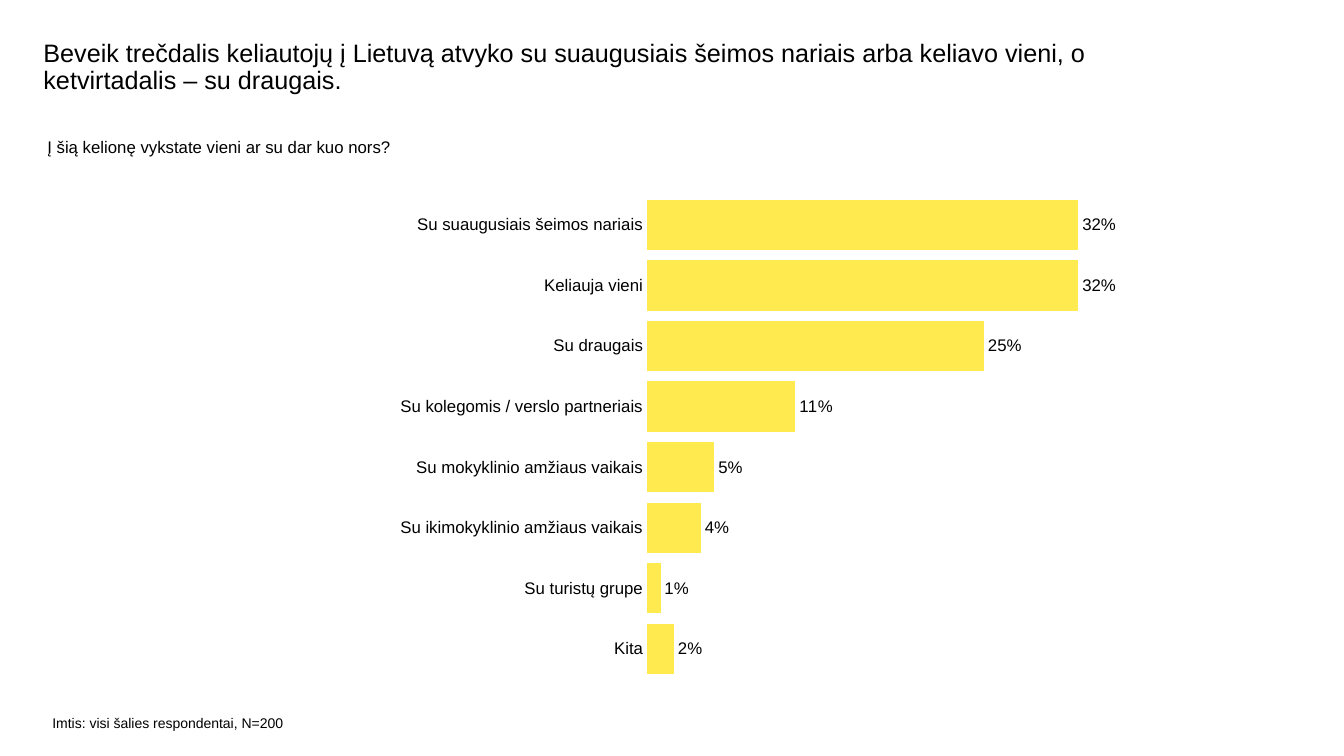
from dataclasses import dataclass

import lxml.etree
import pptx
import pptx.chart.data
import pptx.dml.color
import pptx.enum.chart
import pptx.oxml
import pptx.oxml.ns
import pptx.util

COLORS = {"text": "000000", "bar": "FFEB50"}
FONT = "Arial"


@dataclass
class Label:
    text: str
    left: float
    top: float
    width: float
    height: float
    size: float
    line_spacing: float = 1.0


@dataclass
class Answer:
    category: str
    share: float


LABELS = [
    Label("Beveik trečdalis keliautojų į Lietuvą atvyko su suaugusiais šeimos nariais "
          "arba keliavo vieni, o ketvirtadalis – su draugais.",
          31, 28.8, 810, 43.2, 18, 0.9),
    Label("Į šią kelionę vykstate vieni ar su dar kuo nors?", 33.84, 97.92, 856, 43.9, 12),
    Label("Imtis: visi šalies respondentai, N=200", 37.44, 510.5, 182.2, 17.3, 10),
]

ANSWERS = [
    Answer("Su suaugusiais šeimos nariais", 0.32),
    Answer("Keliauja vieni", 0.32),
    Answer("Su draugais", 0.25),
    Answer("Su kolegomis / verslo partneriais", 0.11),
    Answer("Su mokyklinio amžiaus vaikais", 0.05),
    Answer("Su ikimokyklinio amžiaus vaikais", 0.04),
    Answer("Su turistų grupe", 0.01),
    Answer("Kita", 0.02),
]

PLOT_LAYOUT = {"x": 0.3, "y": 0.03, "w": 0.5, "h": 0.94}


def color(name: str) -> pptx.dml.color.RGBColor:
    return pptx.dml.color.RGBColor.from_string(COLORS[name])


def style_font(font, size: float) -> None:
    font.name = FONT
    font.size = pptx.util.Pt(size)
    font.bold = False
    font.color.rgb = color("text")


def add_label(page, label: Label) -> None:
    box = page.shapes.add_textbox(
        pptx.util.Pt(label.left), pptx.util.Pt(label.top),
        pptx.util.Pt(label.width), pptx.util.Pt(label.height))
    frame = box.text_frame
    frame.word_wrap = True
    frame.margin_left = frame.margin_right = pptx.util.Pt(0)
    frame.margin_top = frame.margin_bottom = pptx.util.Pt(0)
    frame.text = label.text
    para = frame.paragraphs[0]
    para.line_spacing = label.line_spacing
    for span in para.runs:
        style_font(span.font, label.size)


def fix_plot_area(chart) -> None:
    qn = pptx.oxml.ns.qn
    area = chart.plots[0]._element.getparent()
    for existing in area.findall(qn("c:layout")):
        area.remove(existing)
    layout = lxml.etree.Element(qn("c:layout"))
    manual = lxml.etree.SubElement(layout, qn("c:manualLayout"))
    settings = {"layoutTarget": "inner", "xMode": "edge", "yMode": "edge", **PLOT_LAYOUT}
    for tag, value in settings.items():
        lxml.etree.SubElement(manual, qn(f"c:{tag}")).set("val", str(value))
    area.insert(0, layout)


def add_answer_chart(page, answers: list[Answer]) -> None:
    data = pptx.chart.data.CategoryChartData(number_format="0%")
    bottom_up = answers[::-1]
    data.categories = [answer.category for answer in bottom_up]
    data.add_series("Series 1", [answer.share for answer in bottom_up])
    chart = page.shapes.add_chart(
        pptx.enum.chart.XL_CHART_TYPE.BAR_CLUSTERED,
        pptx.util.Pt(260), pptx.util.Pt(128.2),
        pptx.util.Pt(674), pptx.util.Pt(368), data).chart
    chart.has_legend = False
    chart.has_title = False
    style_font(chart.font, 12)

    categories = chart.category_axis
    categories.major_tick_mark = pptx.enum.chart.XL_TICK_MARK.NONE
    categories.format.line.fill.background()
    style_font(categories.tick_labels.font, 12)

    values = chart.value_axis
    values.minimum_scale = 0
    values.maximum_scale = 0.35
    values.has_major_gridlines = False
    values.visible = False

    plot = chart.plots[0]
    plot.gap_width = 20
    plot.vary_by_categories = False
    bars = plot.series[0]
    bars.format.fill.solid()
    bars.format.fill.fore_color.rgb = color("bar")
    labels = bars.data_labels
    labels.show_value = True
    labels.number_format = "0%"
    labels.number_format_is_linked = False
    labels.position = pptx.enum.chart.XL_LABEL_POSITION.OUTSIDE_END
    style_font(labels.font, 12)
    fix_plot_area(chart)


def main() -> None:
    deck = pptx.Presentation()
    deck.slide_width = pptx.util.Pt(960)
    deck.slide_height = pptx.util.Pt(540)
    page = deck.slides.add_slide(deck.slide_layouts[6])
    for label in LABELS:
        add_label(page, label)
    add_answer_chart(page, ANSWERS)
    deck.save("out.pptx")


if __name__ == "__main__":
    main()
